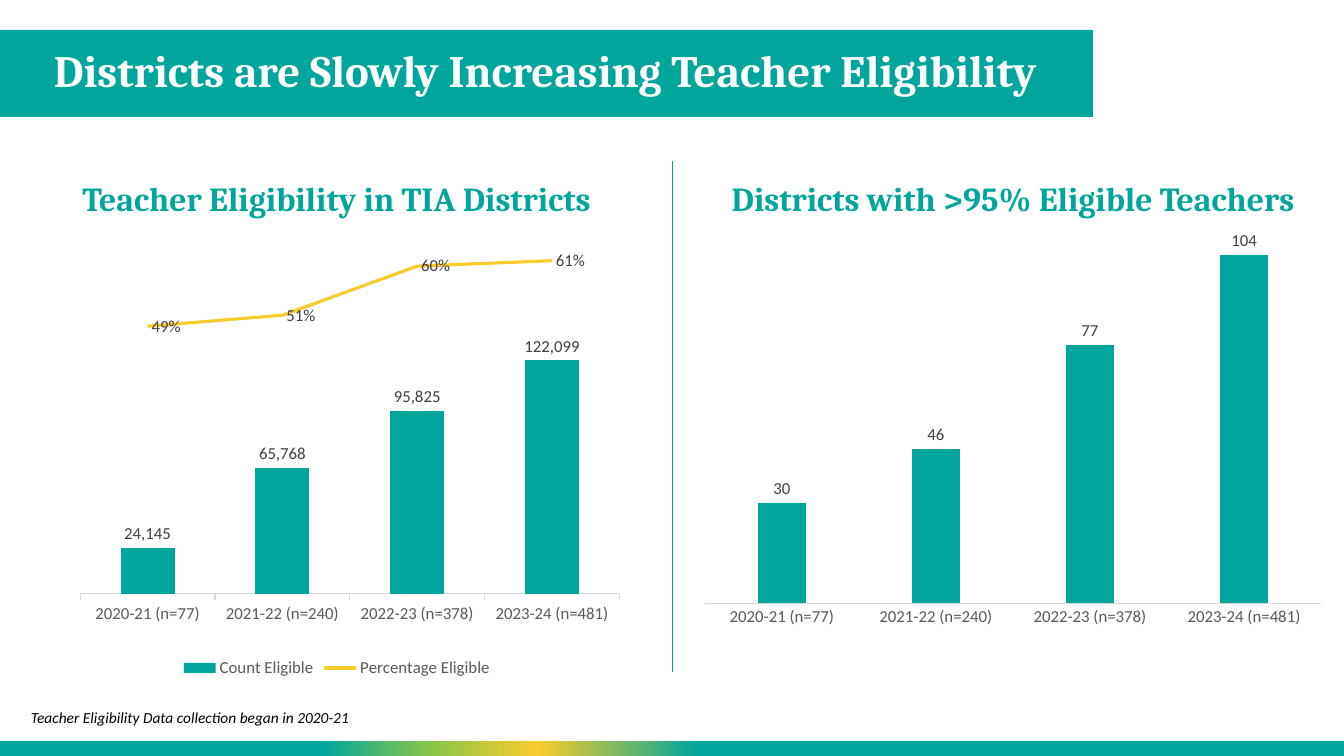
from lxml import etree
from pptx import Presentation
from pptx import util as u
from pptx.chart import data as cd
from pptx.dml import color
from pptx.enum import chart as ch
from pptx.enum import shapes, text
from pptx.oxml import ns, parse_xml

PX = 914400 / 100.8
TEAL, GOLD, GREEN = "00A69B", "F8CC2B", "87C54A"
AXIS, LABEL, RULE = "595959", "404040", "D9D9D9"
YEARS = ["2020-21 (n=77)", "2021-22 (n=240)", "2022-23 (n=378)", "2023-24 (n=481)"]
BAND = [(0, TEAL), (48, TEAL), (60, GOLD), (68, GREEN), (76, TEAL), (100, TEAL)]


def px(*lengths):
    return [u.Emu(round(n * PX)) for n in lengths]


def rgb(value):
    return color.RGBColor.from_string(value)


def assign(target, values):
    for name, value in values.items():
        setattr(target, name, value)


def style_font(font, size, hue, face="Calibri", **flags):
    assign(font, {"size": u.Pt(size), "name": face, **flags})
    font.color.rgb = rgb(hue)


def add_bar(s, box):
    bar = s.shapes.add_shape(shapes.MSO_SHAPE.RECTANGLE, *px(*box))
    bar.shadow.inherit = False
    bar.fill.solid()
    bar.fill.fore_color.rgb = rgb(TEAL)
    bar.line.fill.background()
    return bar


def add_text(s, box, words, size, hue, anchor, align="LEFT", spacing=1.0, **font):
    tf = s.shapes.add_textbox(*px(*box)).text_frame
    assign(tf, {"word_wrap": True, "vertical_anchor": anchor})
    p = tf.paragraphs[0]
    assign(p, {"alignment": getattr(text.PP_ALIGN, align), "line_spacing": spacing})
    r = p.add_run()
    r.text = words
    style_font(r.font, size, hue, **font)


def header(s, box):
    x, y, w, h = box
    add_bar(s, box)
    add_text(s, (x + 45, y - 1, w - 43, h + 1),
             "Districts are Slowly Increasing Teacher Eligibility", 32, "FFFFFF",
             text.MSO_ANCHOR.MIDDLE, spacing=0.9, face="Cambria", bold=True)


def footer_band(s, box):
    band = add_bar(s, box)
    stops = "".join(f'<a:gs pos="{at * 1000}"><a:srgbClr val="{hue}"/></a:gs>' for at, hue in BAND)
    solid = band._element.spPr.find(ns.qn("a:solidFill"))
    solid.getparent().replace(solid, parse_xml(
        f'<a:gradFill {ns.nsdecls("a")}><a:gsLst>{stops}</a:gsLst>'
        '<a:lin ang="10800000" scaled="0"/></a:gradFill>'))


def divider(s, x, top, bottom):
    line = s.shapes.add_connector(shapes.MSO_CONNECTOR.STRAIGHT, *px(x, top, x, bottom))
    line.line.color.rgb = rgb(TEAL)
    line.line.width = u.Pt(0.5)
    etree.SubElement(line._element.spPr, ns.qn("a:effectLst"))


def label_series(series, fmt):
    labels = series.data_labels
    assign(labels, {"show_value": True, "number_format": fmt, "number_format_is_linked": False})
    style_font(labels.font, 12, LABEL)
    return labels


def set_plot_area(chart, layout):
    parts = "".join(f'<c:{k} val="{v}"/>' for k, v in zip("xywh", layout))
    area = chart._chartSpace.chart.plotArea
    for old in area.findall(ns.qn("c:layout")):
        area.remove(old)
    area.insert(0, parse_xml(
        f'<c:layout {ns.nsdecls("c")}><c:manualLayout><c:layoutTarget val="inner"/>'
        f'<c:xMode val="edge"/><c:yMode val="edge"/>{parts}</c:manualLayout></c:layout>'))


def column_chart(s, box, columns, gap, overlap, top, tick, layout):
    data = cd.CategoryChartData()
    data.categories = YEARS
    for name, values in columns:
        data.add_series(name, values)
    frame = s.shapes.add_chart(ch.XL_CHART_TYPE.COLUMN_CLUSTERED, *px(*box), data)
    chart = frame.chart
    assign(chart, {"has_title": False, "has_legend": False})
    style_font(chart.font, 10, "000000")
    plot = chart.plots[0]
    assign(plot, {"gap_width": gap, "overlap": overlap, "vary_by_categories": False})
    cat, val = chart.category_axis, chart.value_axis
    assign(cat, {"major_tick_mark": tick, "has_major_gridlines": False})
    assign(val, {"major_tick_mark": tick, "has_major_gridlines": False,
                 "minimum_scale": 0, "maximum_scale": top,
                 "tick_label_position": ch.XL_TICK_LABEL_POSITION.NONE})
    for axis in (cat, val):
        style_font(axis.tick_labels.font, 12, AXIS)
    cat.format.line.color.rgb = rgb(RULE)
    cat.format.line.width = u.Pt(0.75)
    val.format.line.fill.background()
    bars = plot.series[0]
    bars.format.fill.solid()
    bars.format.fill.fore_color.rgb = rgb(TEAL)
    label_series(bars, "#,##0").position = ch.XL_LABEL_POSITION.OUTSIDE_END
    set_plot_area(chart, layout)
    return chart


def move_to_line(chart, top):
    area = chart._chartSpace.chart.plotArea
    bars = area.find(ns.qn("c:barChart"))
    ser = bars.findall(ns.qn("c:ser"))[1]
    for flag in ser.findall(ns.qn("c:invertIfNegative")):
        ser.remove(flag)
    line = parse_xml(
        f'<c:lineChart {ns.nsdecls("c")}><c:grouping val="standard"/><c:varyColors val="0"/>'
        '<c:marker val="1"/><c:axId val="501"/><c:axId val="502"/></c:lineChart>')
    line.insert(2, ser)
    bars.addnext(line)
    last = area.findall(ns.qn("c:valAx"))[-1]
    for kind, own, other, limit, hidden, side, cross in (
            ("catAx", 501, 502, "", 1, "b", "autoZero"),
            ("valAx", 502, 501, f'<c:max val="{top}"/><c:min val="0"/>', 0, "r", "max")):
        axis = parse_xml(
            f'<c:{kind} {ns.nsdecls("c", "a")}><c:axId val="{own}"/>'
            f'<c:scaling><c:orientation val="minMax"/>{limit}</c:scaling>'
            f'<c:delete val="{hidden}"/><c:axPos val="{side}"/>'
            '<c:majorTickMark val="out"/><c:minorTickMark val="none"/><c:tickLblPos val="none"/>'
            '<c:spPr><a:ln><a:noFill/></a:ln></c:spPr>'
            f'<c:crossAx val="{other}"/><c:crosses val="{cross}"/></c:{kind}>')
        last.addnext(axis)
        last = axis
    share = chart.plots[1].series[0]
    share.smooth = False
    share.marker.style = ch.XL_MARKER_STYLE.NONE
    share.format.line.color.rgb = rgb(GOLD)
    share.format.line.width = u.Pt(2.25)
    label_series(share, "0%").position = ch.XL_LABEL_POSITION.RIGHT


def panel_heading(s, box, words):
    add_text(s, box, words, 24, TEAL, text.MSO_ANCHOR.BOTTOM, "CENTER",
             face="Cambria", bold=True)


def eligibility_panel(s, box):
    x, y, w, h = box
    panel_heading(s, (x + 36, y, 569, 91), "Teacher Eligibility in TIA Districts")
    columns = [("Count Eligible", [24145, 65768, 95825, 122099]),
               ("Percentage Eligible", [0.49, 0.51, 0.6, 0.61])]
    chart = column_chart(s, (x, y + 60, w, h - 60), columns, 150, 0, 200000,
                         ch.XL_TICK_MARK.OUTSIDE, (0.1, 0.04, 0.84, 0.78))
    move_to_line(chart, 0.7)
    chart.has_legend = True
    assign(chart.legend, {"position": ch.XL_LEGEND_POSITION.BOTTOM, "include_in_layout": False})
    style_font(chart.legend.font, 12, AXIS)


def districts_panel(s, box):
    x, y, w, h = box
    panel_heading(s, (x + 20, y, 602, 91), "Districts with >95% Eligible Teachers")
    column_chart(s, (x, y + 60, w, h - 60), [("Series 1", [30, 46, 77, 104])], 219, -27, 120,
                 ch.XL_TICK_MARK.NONE, (0.02, 0.02, 0.96, 0.9))


def main():
    prs = Presentation()
    prs.slide_width, prs.slide_height = px(1344, 756)
    s = prs.slides.add_slide(prs.slide_layouts[6])
    header(s, (-1, 30, 1094, 87))
    footer_band(s, (-1, 741, 1345, 15))
    divider(s, 672, 161, 672)
    eligibility_panel(s, (16, 132, 642, 550))
    districts_panel(s, (692, 132, 642, 507))
    add_text(s, (21, 703, 725, 29), "Teacher Eligibility Data collection began in 2020-21",
             11, "000000", text.MSO_ANCHOR.TOP, italic=True)
    prs.save("out.pptx")


if __name__ == "__main__":
    main()
